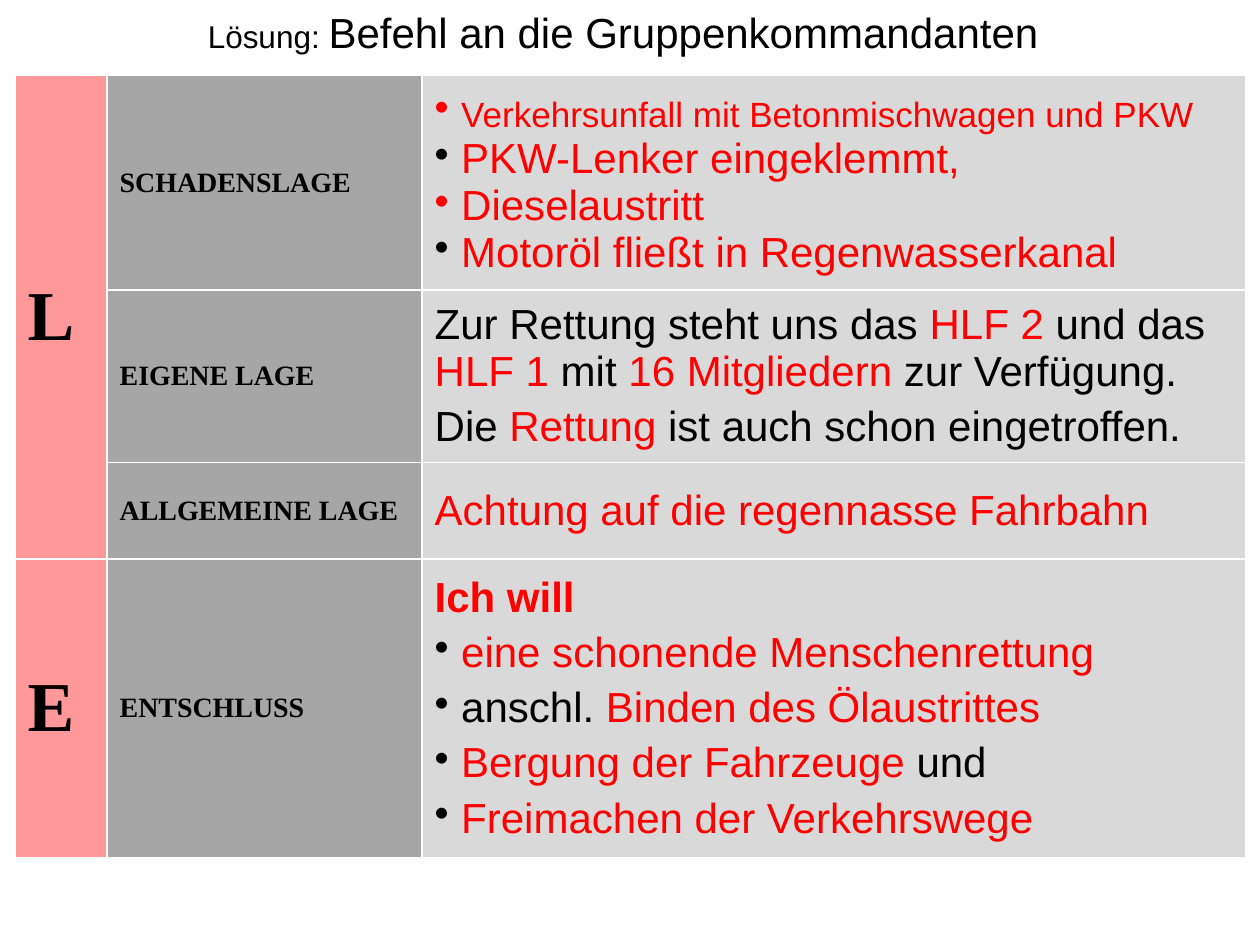
import pptx
import pptx.dml.color
import pptx.enum.text
import pptx.oxml
import pptx.oxml.ns
import pptx.util
from lxml import etree
from pptx.util import Inches

BLACK, RED, WHITE = "000000", "FF0000", "FFFFFF"
PINK, DARK_GRAY, LIGHT_GRAY = "FF9999", "A6A6A6", "D9D9D9"
SANS, SERIF = "Arial", "Times New Roman"

# Content: a run is (text, colour[, size])
TITLE = [("Lösung: ", BLACK, 18), ("Befehl an die Gruppenkommandanten", BLACK)]
BLACK_GAP = (" ", BLACK)

# A row is: letter, heading, height, space before, paragraphs (bullet, bold, runs)
ROWS = [
    ("L", "SCHADENSLAGE", 1.7, 0, [
        (True, False, [(" ", RED), ("Verkehrsunfall mit Betonmischwagen und PKW", RED, 20)]),
        (True, False, [BLACK_GAP, ("PKW-Lenker eingeklemmt,", RED)]),
        (True, False, [(" Dieselaustritt", RED)]),
        (True, False, [BLACK_GAP, ("Motoröl fließt in Regenwasserkanal", RED)]),
    ]),
    (None, "EIGENE LAGE", 1.37, 4.8, [
        (False, False, [("Zur Rettung steht uns das", BLACK), (" HLF 2 ", RED),
                        ("und das", BLACK), (" HLF 1 ", RED), ("mit", BLACK),
                        (" 16 Mitgliedern ", RED), ("zur Verfügung.", BLACK)]),
        (False, False, [("Die ", BLACK), ("Rettung", RED),
                        (" ist auch schon eingetroffen.", BLACK)]),
    ]),
    (None, "ALLGEMEINE LAGE", 0.76, 4.8, [
        (False, False, [("Achtung auf die regennasse Fahrbahn", RED)]),
    ]),
    ("E", "ENTSCHLUSS", 2.36, 4.8, [
        (False, True, [("Ich will", RED)]),
        (True, False, [BLACK_GAP, ("eine schonende Menschenrettung", RED)]),
        (True, False, [(" anschl. ", BLACK), ("Binden des Ölaustrittes", RED)]),
        (True, False, [BLACK_GAP, ("Bergung der Fahrzeuge ", RED), ("und", BLACK)]),
        (True, False, [BLACK_GAP, ("Freimachen der Verkehrswege", RED)]),
    ]),
]
COLUMN_WIDTHS = [0.73, 2.5, 6.54]


def color(value):
    return pptx.dml.color.RGBColor.from_string(value)


def add_bullet(paragraph):
    properties = paragraph._p.get_or_add_pPr()
    properties.set("marL", "0")
    properties.set("indent", "0")
    etree.SubElement(properties, pptx.oxml.ns.qn("a:buChar"), char="•")


def write_paragraph(paragraph, runs, font_name=SANS, bold=False, bullet=False, before=0):
    if bullet:
        add_bullet(paragraph)
    paragraph.space_before = pptx.util.Pt(before)
    paragraph.font.name = font_name
    paragraph.font.bold = bold
    for text, text_color, *size in runs:
        run = paragraph.add_run()
        run.text = text
        run.font.size = pptx.util.Pt(size[0] if size else 24)
        run.font.color.rgb = color(text_color)


def write_cell(cell, fill, paragraphs, font_name=SANS, before=0):
    cell.fill.solid()
    cell.fill.fore_color.rgb = color(fill)
    cell.vertical_anchor = pptx.enum.text.MSO_ANCHOR.MIDDLE
    text_frame = cell.text_frame
    for index, (bullet, bold, runs) in enumerate(paragraphs):
        paragraph = text_frame.add_paragraph() if index else text_frame.paragraphs[0]
        write_paragraph(paragraph, runs, font_name, bold, bullet, before)


def add_borders(cell):
    properties = cell._tc.get_or_add_tcPr()
    for index, side in enumerate(("lnL", "lnR", "lnT", "lnB")):
        properties.insert(index, pptx.oxml.parse_xml(
            f'<a:{side} {pptx.oxml.ns.nsdecls("a")} w="12700"><a:solidFill>'
            f'<a:srgbClr val="{WHITE}"/></a:solidFill></a:{side}>'))


presentation = pptx.Presentation()
presentation.slide_width, presentation.slide_height = Inches(10), Inches(7.5)
slide = presentation.slides.add_slide(presentation.slide_layouts[6])

# Title
title_box = slide.shapes.add_textbox(Inches(0.12), 0, Inches(9.65), Inches(0.5))
title_box.text_frame.word_wrap = True
title = title_box.text_frame.paragraphs[0]
title.alignment = pptx.enum.text.PP_ALIGN.CENTER
write_paragraph(title, TITLE)

# Order table
table = slide.shapes.add_table(
    len(ROWS), len(COLUMN_WIDTHS), Inches(0.12), Inches(0.6),
    Inches(sum(COLUMN_WIDTHS)), Inches(sum(row[2] for row in ROWS))).table
table.first_row = table.horz_banding = False
for column, width in zip(table.columns, COLUMN_WIDTHS):
    column.width = Inches(width)

for index, (letter, heading, height, before, paragraphs) in enumerate(ROWS):
    table.rows[index].height = Inches(height)
    letter_paragraphs = [(False, True, [(letter, BLACK, 40)])] if letter else []
    write_cell(table.cell(index, 0), PINK, letter_paragraphs, SERIF)
    write_cell(table.cell(index, 1), DARK_GRAY,
               [(False, True, [(heading, BLACK, 16)])], SERIF)
    write_cell(table.cell(index, 2), LIGHT_GRAY, paragraphs, before=before)

for cell in table.iter_cells():
    add_borders(cell)
table.cell(0, 0).merge(table.cell(2, 0))

presentation.save("out.pptx")
